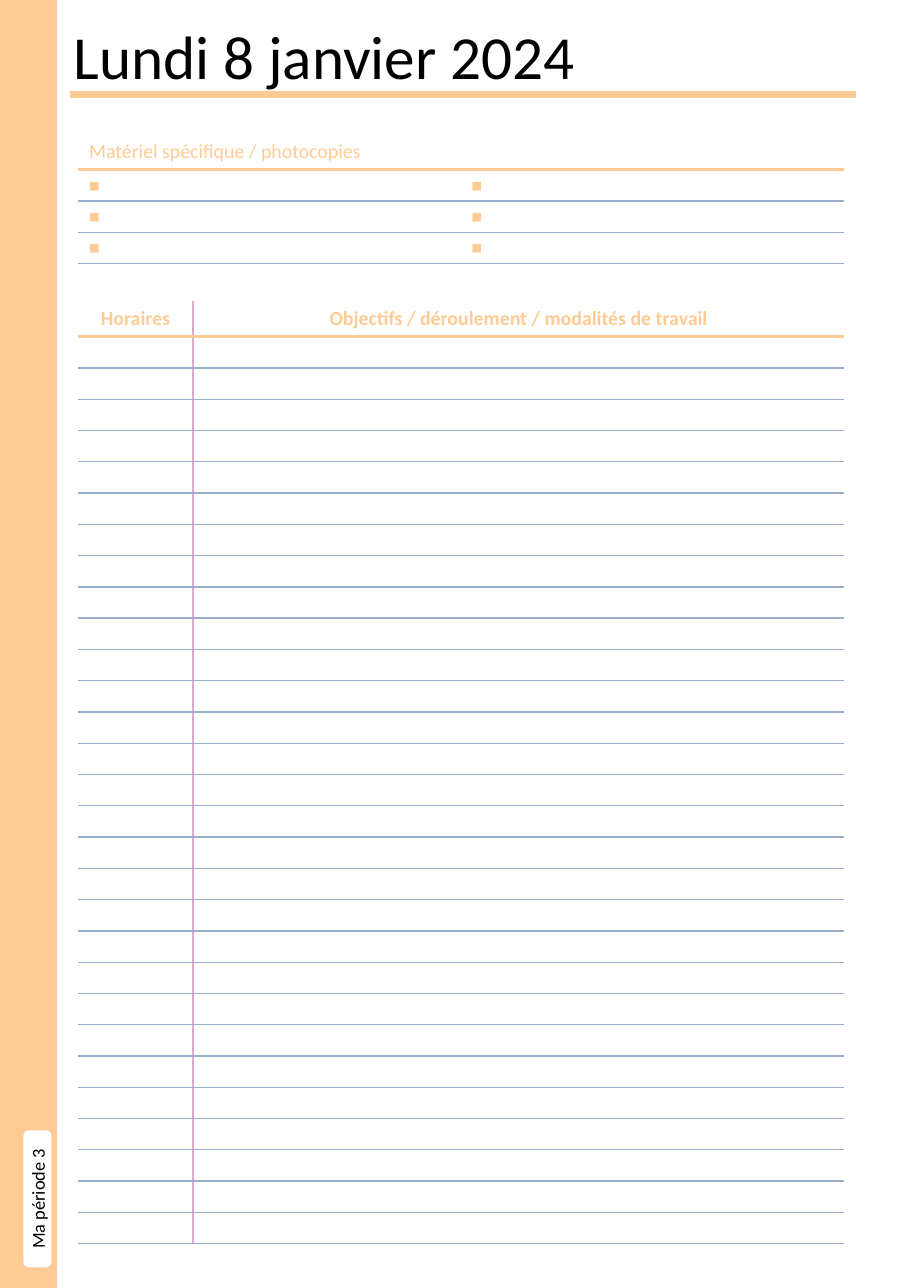
import lxml.etree
import pptx
import pptx.dml.color
import pptx.enum.shapes
import pptx.enum.text
import pptx.oxml.ns
import pptx.util

Pt = pptx.util.Pt
RGBColor = pptx.dml.color.RGBColor
SHAPES = pptx.enum.shapes.MSO_SHAPE
CENTER = pptx.enum.text.PP_ALIGN.CENTER
MIDDLE = pptx.enum.text.MSO_ANCHOR.MIDDLE
qn = pptx.oxml.ns.qn

PEACH = RGBColor(0xFF, 0xCB, 0x94)
RULE_BLUE = RGBColor(0x9A, 0xAD, 0xCD)
MARGIN_PINK = RGBColor(0xDC, 0xA9, 0xCC)
WHITE = RGBColor(0xFF, 0xFF, 0xFF)
BLACK = RGBColor(0, 0, 0)

PAGE_WIDTH, PAGE_HEIGHT = 595.44, 841.68
TABLE_LEFT = 51.12
HEADER_HEIGHT, ROW_HEIGHT = 23, 20.45
SCHEDULE_ROWS = 29
BULLET = "◼︎"


def write(frame, text, font="Calibri", size=13, color=BLACK, bold=False, align=None):
    para = frame.paragraphs[0]
    para.alignment = align
    span = para.add_run()
    span.text = text
    span.font.name = font
    span.font.size = Pt(size)
    span.font.bold = bold
    span.font.color.rgb = color


def set_border(cell, side, color, width):
    """Draw one side (L, R, T or B) of a cell, or hide it if color is None."""
    border = lxml.etree.SubElement(cell._tc.get_or_add_tcPr(), qn(f"a:ln{side}"))
    if color is None:
        border.set("w", "0")
        lxml.etree.SubElement(border, qn("a:noFill"))
        return
    border.set("w", str(int(Pt(width))))
    fill = lxml.etree.SubElement(border, qn("a:solidFill"))
    lxml.etree.SubElement(fill, qn("a:srgbClr")).set("val", str(color))


class PlannerPage:
    """Holds the style of the planner and the slide being filled."""

    def __init__(self, slide, accent, rule):
        self.slide = slide
        self.accent = accent
        self.rule = rule

    def title(self, text, left, top, width, height):
        box = self.slide.shapes.add_textbox(Pt(left), Pt(top), Pt(width), Pt(height))
        box.text_frame.word_wrap = True
        write(box.text_frame, text, size=40)

    def line(self, left, right, y, width):
        line = self.slide.shapes.add_connector(
            pptx.enum.shapes.MSO_CONNECTOR.STRAIGHT, Pt(left), Pt(y), Pt(right), Pt(y))
        line.line.color.rgb = self.accent
        line.line.width = Pt(width)
        lxml.etree.SubElement(line._element.spPr, qn("a:effectLst"))

    def block(self, kind, left, top, width, height, color):
        block = self.slide.shapes.add_shape(kind, Pt(left), Pt(top), Pt(width), Pt(height))
        block.shadow.inherit = False
        block.fill.solid()
        block.fill.fore_color.rgb = color
        block.line.color.rgb = color
        block.line.width = Pt(1)
        return block

    def side_tab(self, text, left, top, width, height):
        tab = self.block(SHAPES.ROUNDED_RECTANGLE, left, top, width, height, WHITE)
        frame = tab.text_frame
        frame.vertical_anchor = MIDDLE
        frame.margin_left = frame.margin_right = 0
        frame.margin_top = frame.margin_bottom = 0
        frame._txBody.bodyPr.set("vert", "vert270")
        write(frame, text, size=12, align=CENTER)

    def ruled_table(self, top, widths, headers, body, divider=None, **header_format):
        """Table with an accent line under its header and a rule under each row."""
        heights = [HEADER_HEIGHT] + [ROW_HEIGHT] * len(body)
        table = self.slide.shapes.add_table(
            len(heights), len(widths), Pt(TABLE_LEFT), Pt(top),
            Pt(sum(widths)), Pt(sum(heights))).table
        table.first_row = table.horz_banding = False
        for column, width in zip(table.columns, widths):
            column.width = Pt(width)
        last = len(widths) - 1
        for row_index, texts in enumerate([headers] + body):
            table.rows[row_index].height = Pt(heights[row_index])
            for column_index, text in enumerate(texts):
                cell = table.cell(row_index, column_index)
                set_border(cell, "L", divider if column_index else None, 1)
                set_border(cell, "R", divider if column_index < last else None, 1)
                above = {0: (None, 0), 1: (self.accent, 2.25)}
                set_border(cell, "T", *above.get(row_index, (self.rule, 1)))
                below = (self.rule, 1) if row_index else (self.accent, 2.25)
                set_border(cell, "B", *below)
                cell.fill.solid()
                cell.fill.fore_color.rgb = WHITE
                cell.vertical_anchor = MIDDLE
                cell.margin_top = cell.margin_bottom = Pt(1)
                if text:
                    style = {"size": 11} if row_index else header_format
                    write(cell.text_frame, text, color=self.accent, **style)
                else:
                    para = cell.text_frame.paragraphs[0]
                    para._p.get_or_add_endParaRPr().set("sz", "1100")


def main():
    deck = pptx.Presentation()
    deck.slide_width, deck.slide_height = Pt(PAGE_WIDTH), Pt(PAGE_HEIGHT)
    page = PlannerPage(deck.slides.add_slide(deck.slide_layouts[6]), PEACH, RULE_BLUE)

    page.title("Lundi 8 janvier 2024", 41.04, 8.64, 527, 55.44)
    page.line(45.5, 559.5, 61.9, 4.75)
    page.ruled_table(87.84, [250, 250.5], ["Matériel spécifique / photocopies", ""],
                     [[BULLET, BULLET]] * 3)
    page.ruled_table(197, [75, 425.5],
                     ["Horaires", "Objectifs / déroulement / modalités de travail"],
                     [["", ""]] * SCHEDULE_ROWS, divider=MARGIN_PINK,
                     bold=True, align=CENTER)
    page.block(SHAPES.RECTANGLE, 0, 0, 36.72, PAGE_HEIGHT, PEACH)
    page.side_tab("Ma période 3", 15.84, 739.2, 17.3, 88.5)

    deck.save("out.pptx")


if __name__ == "__main__":
    main()
